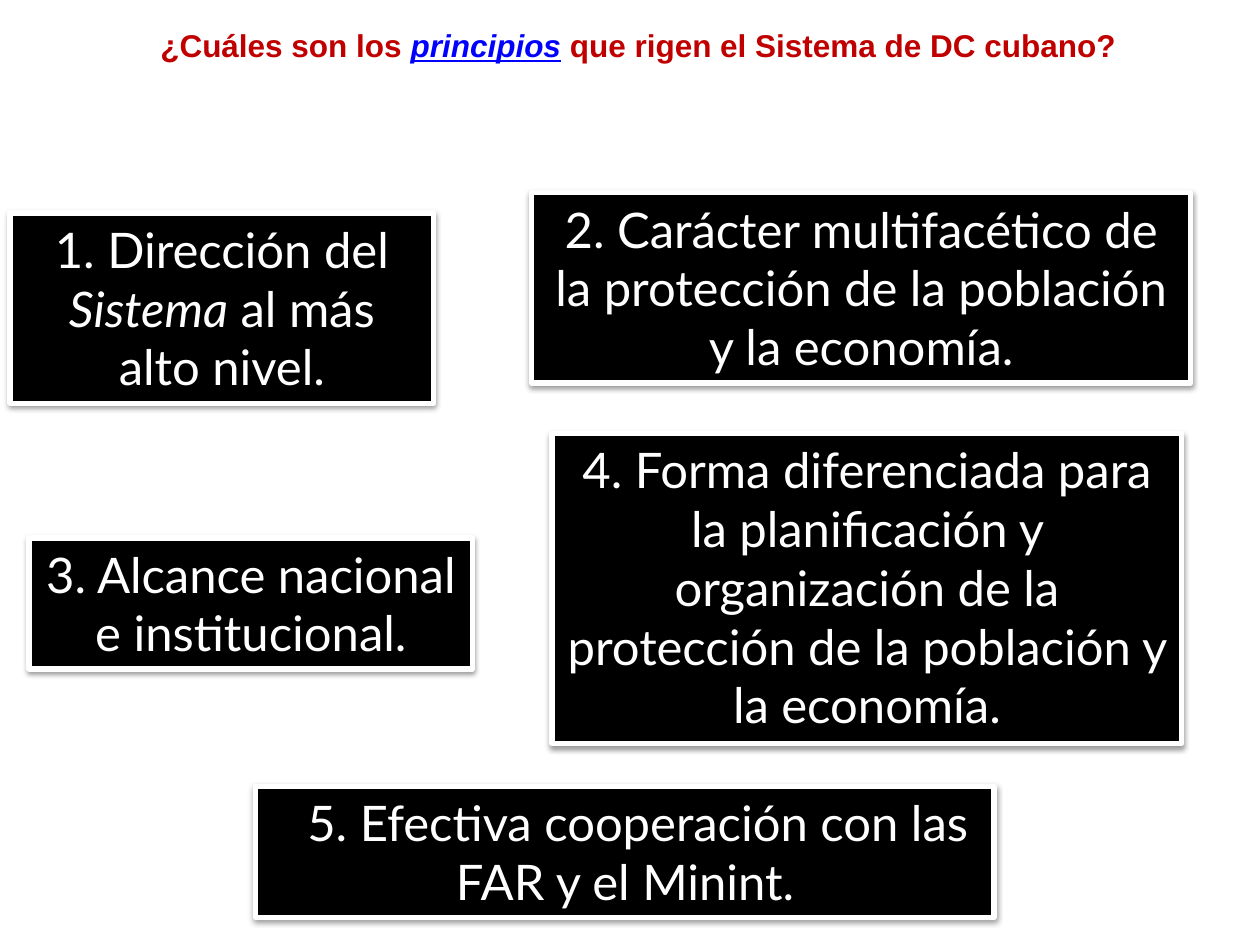
"""Build a slide with the five principles of the Cuban civil defence system."""
from dataclasses import dataclass

from lxml.etree import SubElement
from pptx import Presentation
from pptx.dml.color import RGBColor
from pptx.enum.shapes import MSO_SHAPE
from pptx.enum.text import MSO_ANCHOR, MSO_AUTO_SIZE, PP_ALIGN
from pptx.oxml.ns import qn
from pptx.shapes.autoshape import Shape
from pptx.slide import Slide
from pptx.text.text import _Paragraph as Paragraph
from pptx.util import Pt


@dataclass(frozen=True)
class Theme:
    paper: str = "FFFFFF"
    ink: str = "000000"
    title: str = "C00000"
    link: str = "0000FF"
    title_font: str = "Arial"
    body_font: str = "Lato"
    title_size: float = 18
    body_size: float = 28
    border: float = 3
    indent: float = 14.4


@dataclass(frozen=True)
class Span:
    text: str
    italic: bool = False


@dataclass(frozen=True)
class Principle:
    left: float
    top: float
    width: float
    height: float
    spans: tuple[Span, ...]
    indent: float = 0


THEME = Theme()

PRINCIPLES = (
    Principle(5.8, 121.7, 241.9, 108.7, (
        Span("1. Dirección del "), Span("Sistema", italic=True), Span(" al más alto nivel."))),
    Principle(303.8, 110.2, 376.6, 108.7, (
        Span("2. Carácter multifacético de la protección de la población y la economía."),)),
    Principle(16.6, 307.4, 253.4, 74.9, (
        Span("3. Alcance nacional e institucional."),)),
    Principle(315.4, 247.7, 360, 177.1, (
        Span("4. Forma diferenciada para la planificación y organización "
             "de la protección de la población y la economía."),)),
    Principle(146.2, 449.3, 421.9, 74.9, (
        Span("5. Efectiva cooperación con las FAR y el Minint."),), THEME.indent),
)


def add_span(para: Paragraph, text: str, *, font: str, size: float, color: str,
             bold: bool = False, italic: bool = False, underline: bool = False) -> None:
    span = para.add_run()
    span.text = text
    span.font.name = font
    span.font.size = Pt(size)
    span.font.color.rgb = RGBColor.from_string(color)
    span.font.bold = bold
    span.font.italic = italic
    span.font.underline = underline


def add_box(page: Slide, left: float, top: float, width: float, height: float) -> Shape:
    box = page.shapes.add_shape(
        MSO_SHAPE.RECTANGLE, Pt(left), Pt(top), Pt(width), Pt(height))
    box.shadow.inherit = False
    box.fill.background()
    box.line.color.rgb = RGBColor.from_string(THEME.paper)
    box.line.width = Pt(THEME.border)
    box.text_frame.word_wrap = True
    box.text_frame.vertical_anchor = MSO_ANCHOR.TOP
    return box


def start_paragraph(box: Shape, indent: float) -> Paragraph:
    para = box.text_frame.paragraphs[0]
    para.alignment = PP_ALIGN.CENTER
    properties = para._p.get_or_add_pPr()
    properties.set("marL", "0")
    properties.set("indent", str(int(Pt(indent))))
    return para


def add_shadow(box: Shape) -> None:
    effects = box._element.spPr.find(qn("a:effectLst"))
    shadow = SubElement(effects, qn("a:outerShdw"), blurRad=str(int(Pt(3.1))),
                        dist=str(int(Pt(1.6))), dir="5400000", rotWithShape="0")
    color = SubElement(shadow, qn("a:srgbClr"), val=THEME.ink)
    SubElement(color, qn("a:alpha"), val="38000")


def draw_title(page: Slide) -> None:
    para = start_paragraph(add_box(page, 11.5, 11.5, 691.9, 85), THEME.indent)
    style = dict(font=THEME.title_font, size=THEME.title_size, bold=True)
    add_span(para, "¿Cuáles son los ", color=THEME.title, **style)
    add_span(para, "principios", color=THEME.link, italic=True, underline=True, **style)
    add_span(para, " que rigen el Sistema de DC cubano?", color=THEME.title, **style)


def draw_principle(page: Slide, principle: Principle) -> None:
    box = add_box(page, principle.left, principle.top, principle.width, principle.height)
    box.fill.solid()
    box.fill.fore_color.rgb = RGBColor.from_string(THEME.ink)
    box.text_frame.auto_size = MSO_AUTO_SIZE.SHAPE_TO_FIT_TEXT
    add_shadow(box)
    para = start_paragraph(box, principle.indent)
    for span in principle.spans:
        add_span(para, span.text, font=THEME.body_font, size=THEME.body_size,
                 color=THEME.paper, italic=span.italic)


def main() -> None:
    deck = Presentation()
    deck.slide_width, deck.slide_height = Pt(720), Pt(540)
    page = deck.slides.add_slide(deck.slide_layouts[6])
    draw_title(page)
    for principle in PRINCIPLES:
        draw_principle(page, principle)
    deck.save("out.pptx")


if __name__ == "__main__":
    main()
